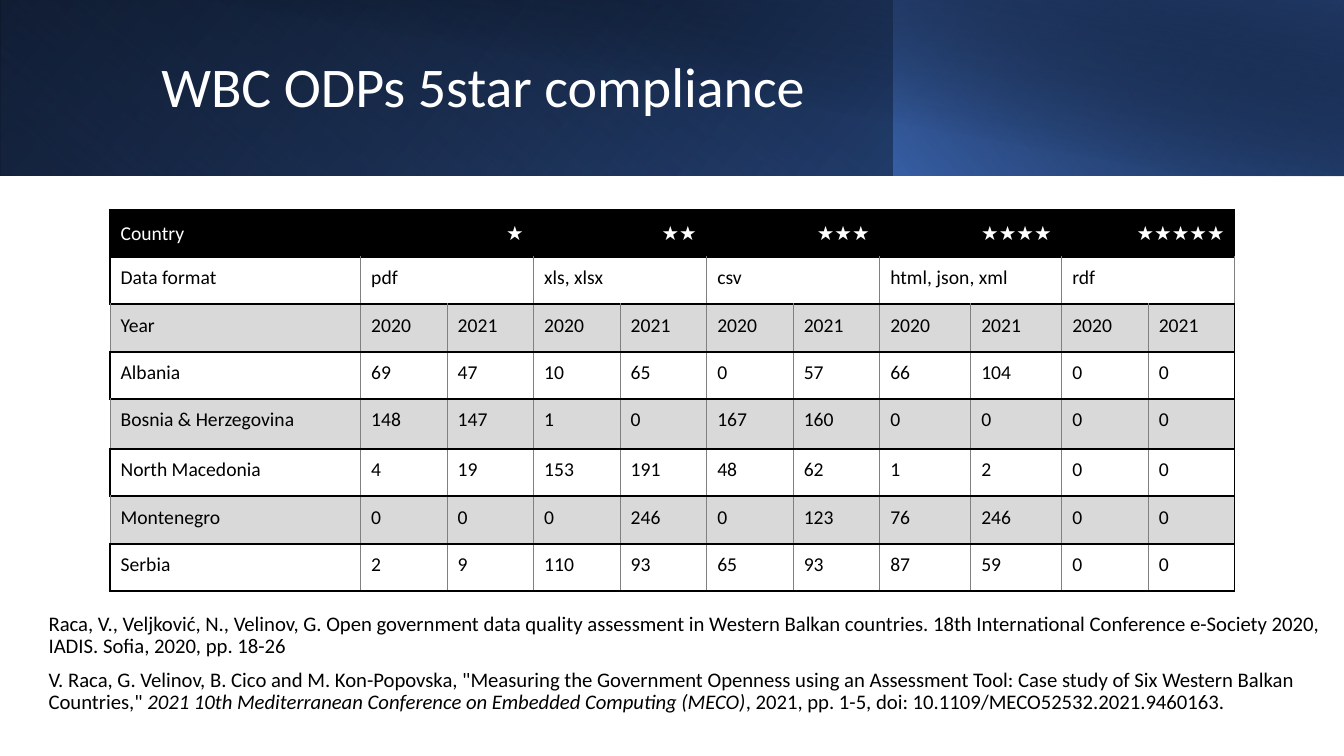
from dataclasses import dataclass

from lxml import etree
from pptx import Presentation
from pptx.dml.color import RGBColor
from pptx.enum import shapes, text
from pptx.oxml import ns, parse_xml
from pptx.util import Pt


@dataclass(frozen=True)
class Theme:
    font: str = "Calibri"
    black: str = "000000"
    white: str = "FFFFFF"
    band: str = "D9D9D9"
    grid: str = "808080"
    blue: str = "4472C4"
    mid_blue: str = "2F5597"
    navy: str = "203864"
    title_size: float = 40
    table_size: float = 14
    source_size: float = 14.8


THEME = Theme()

# left, width, height, rotation, flipped, angle, stops (position, colour, opacity)
PANELS = [
    (0, 960, 125.3, 0, True, 140,
     [(0, THEME.black, 100), (100, THEME.mid_blue, 100)]),
    (0, 639.4, 125.3, 180, True, 230,
     [(20, THEME.blue, 0), (100, THEME.navy, 55)]),
    (638.6, 321.4, 125.3, 0, True, 220,
     [(0, THEME.blue, 66), (100, THEME.black, 30)]),
    (36, 924, 126, 0, False, 280,
     [(50, THEME.black, 0), (99, THEME.navy, 52)]),
]

FORMATS = ["pdf", "xls, xlsx", "csv", "html, json, xml", "rdf"]
ROWS = [
    ["Year"] + ["2020", "2021"] * len(FORMATS),
    ["Albania", 69, 47, 10, 65, 0, 57, 66, 104, 0, 0],
    ["Bosnia & Herzegovina", 148, 147, 1, 0, 167, 160, 0, 0, 0, 0],
    ["North Macedonia", 4, 19, 153, 191, 48, 62, 1, 2, 0, 0],
    ["Montenegro", 0, 0, 0, 246, 0, 123, 76, 246, 0, 0],
    ["Serbia", 2, 9, 110, 93, 65, 93, 87, 59, 0, 0],
]
COLUMN_WIDTHS = [179] + [61.8] * 6 + [65] * 2 + [61.8] * 2
ROW_HEIGHTS = [33.8] * 4 + [35.8] + [33.8] * 3

# each source is a list of (words, italic)
SOURCES = [
    [("Raca, V., Veljković, N., Velinov, G. Open government data quality "
      "assessment in Western Balkan countries. 18th International Conference "
      "e-Society 2020, IADIS. Sofia, 2020, pp. 18-26", False)],
    [("V. Raca, G. Velinov, B. Cico and M. Kon-Popovska, \"Measuring the "
      "Government Openness using an Assessment Tool: Case study of Six Western "
      "Balkan Countries,\" ", False),
     ("2021 10th Mediterranean Conference on Embedded Computing (MECO)", True),
     (", 2021, pp. 1-5, doi: 10.1109/MECO52532.2021.9460163.", False)],
]


def add_span(para, words, size, color, italic=False):
    span = para.add_run()
    span.text = words
    span.font.name = THEME.font
    span.font.size = Pt(size)
    span.font.italic = italic
    span.font.color.rgb = RGBColor.from_string(color)


def add_panel(slide, left, width, height, rotation, flipped, angle, stops):
    """Add a banner rectangle with a gradient, behind the title."""
    panel = slide.shapes.add_shape(
        shapes.MSO_SHAPE.RECTANGLE, Pt(left), 0, Pt(width), Pt(height))
    panel.shadow.inherit = False
    panel.line.fill.background()
    panel.rotation = rotation
    if flipped:
        panel.element.spPr.xfrm.set("flipH", "1")
    stop_xml = "".join(
        f'<a:gs pos="{position * 1000}"><a:srgbClr val="{color}">'
        f'<a:alpha val="{opacity * 1000}"/></a:srgbClr></a:gs>'
        for position, color, opacity in stops)
    gradient = parse_xml(
        f'<a:gradFill {ns.nsdecls("a")} rotWithShape="1">'
        f'<a:gsLst>{stop_xml}</a:gsLst>'
        f'<a:lin ang="{angle * 60000}" scaled="0"/></a:gradFill>')
    panel.element.spPr.find(ns.qn("a:prstGeom")).addnext(gradient)
    slide.shapes.title.element.addprevious(panel.element)


def set_title(slide, words):
    title = slide.shapes.title
    title.left, title.top, title.width, title.height = (
        Pt(108), Pt(23), Pt(779), Pt(81.4))
    title.text_frame.vertical_anchor = text.MSO_ANCHOR.MIDDLE
    para = title.text_frame.paragraphs[0]
    para.alignment = text.PP_ALIGN.LEFT
    para.line_spacing = 0.9
    add_span(para, words, THEME.title_size, THEME.white)


def set_borders(cell, **sides):
    """Draw cell borders; each side L, R, T, B is given as (colour, width)."""
    properties = cell._tc.get_or_add_tcPr()
    for index, side in enumerate("LRTB"):
        color, width = sides[side]
        line = etree.Element(ns.qn(f"a:ln{side}"), w=str(Pt(width)))
        fill = etree.SubElement(line, ns.qn("a:solidFill"))
        etree.SubElement(fill, ns.qn("a:srgbClr"), val=color)
        properties.insert(index, line)


def style_cell(cell, row, column):
    heading, banded = row == 0, row > 0 and row % 2 == 0
    color = THEME.black if heading else THEME.band if banded else THEME.white
    cell.fill.solid()
    cell.fill.fore_color.rgb = RGBColor.from_string(color)
    cell.margin_left = Pt(7.7)
    cell.margin_right = Pt(7 if heading else 3.8)
    cell.margin_top = cell.margin_bottom = Pt(6.6)
    if heading:
        cell.vertical_anchor = text.MSO_ANCHOR.MIDDLE
    thick, thin = (THEME.black, 1.5), (THEME.grid, 0.5)
    thick_left = heading or (column == 0 and not banded)
    thick_right = heading or column == len(COLUMN_WIDTHS) - 1
    set_borders(cell, L=thick if thick_left else thin,
                R=thick if thick_right else thin, T=thick, B=thick)


def fill_cell(cell, words, color=THEME.black, align=text.PP_ALIGN.LEFT):
    para = cell.text_frame.paragraphs[0]
    para.alignment = align
    add_span(para, words, THEME.table_size, color)


def add_compliance_table(slide):
    frame = slide.shapes.add_table(
        len(ROW_HEIGHTS), len(COLUMN_WIDTHS), Pt(78.5), Pt(149.8),
        Pt(sum(COLUMN_WIDTHS)), Pt(sum(ROW_HEIGHTS)))
    table = frame.table
    table.first_row = table.horz_banding = False
    for column, width in zip(table.columns, COLUMN_WIDTHS):
        column.width = Pt(width)
    for row, height in zip(table.rows, ROW_HEIGHTS):
        row.height = Pt(height)
    for row in range(len(ROW_HEIGHTS)):
        for column in range(len(COLUMN_WIDTHS)):
            style_cell(table.cell(row, column), row, column)

    fill_cell(table.cell(0, 0), "Country", THEME.white)
    fill_cell(table.cell(1, 0), "Data format")
    for index, name in enumerate(FORMATS):
        column = 1 + 2 * index
        for row in (0, 1):
            table.cell(row, column).merge(table.cell(row, column + 1))
        fill_cell(table.cell(0, column), "★" * (index + 1), THEME.white,
                  text.PP_ALIGN.RIGHT)
        fill_cell(table.cell(1, column), name)
    for row, values in enumerate(ROWS, start=2):
        for column, value in enumerate(values):
            fill_cell(table.cell(row, column), str(value))


def add_sources(slide):
    box = slide.shapes.add_textbox(Pt(27.6), Pt(442), Pt(939.6), Pt(88))
    frame = box.text_frame
    frame.word_wrap = True
    frame.vertical_anchor = text.MSO_ANCHOR.MIDDLE
    frame.margin_top, frame.margin_bottom = 0, Pt(24)
    for index, source in enumerate(SOURCES):
        para = frame.add_paragraph() if index else frame.paragraphs[0]
        para.line_spacing = 0.9
        para.space_after = Pt(8)
        for words, italic in source:
            add_span(para, words, THEME.source_size, THEME.black, italic)


def main():
    deck = Presentation()
    deck.slide_width, deck.slide_height = Pt(960), Pt(540)
    slide = deck.slides.add_slide(deck.slide_layouts[5])
    for panel in PANELS:
        add_panel(slide, *panel)
    set_title(slide, "WBC ODPs 5star compliance")
    add_sources(slide)
    add_compliance_table(slide)
    deck.save("out.pptx")


if __name__ == "__main__":
    main()
